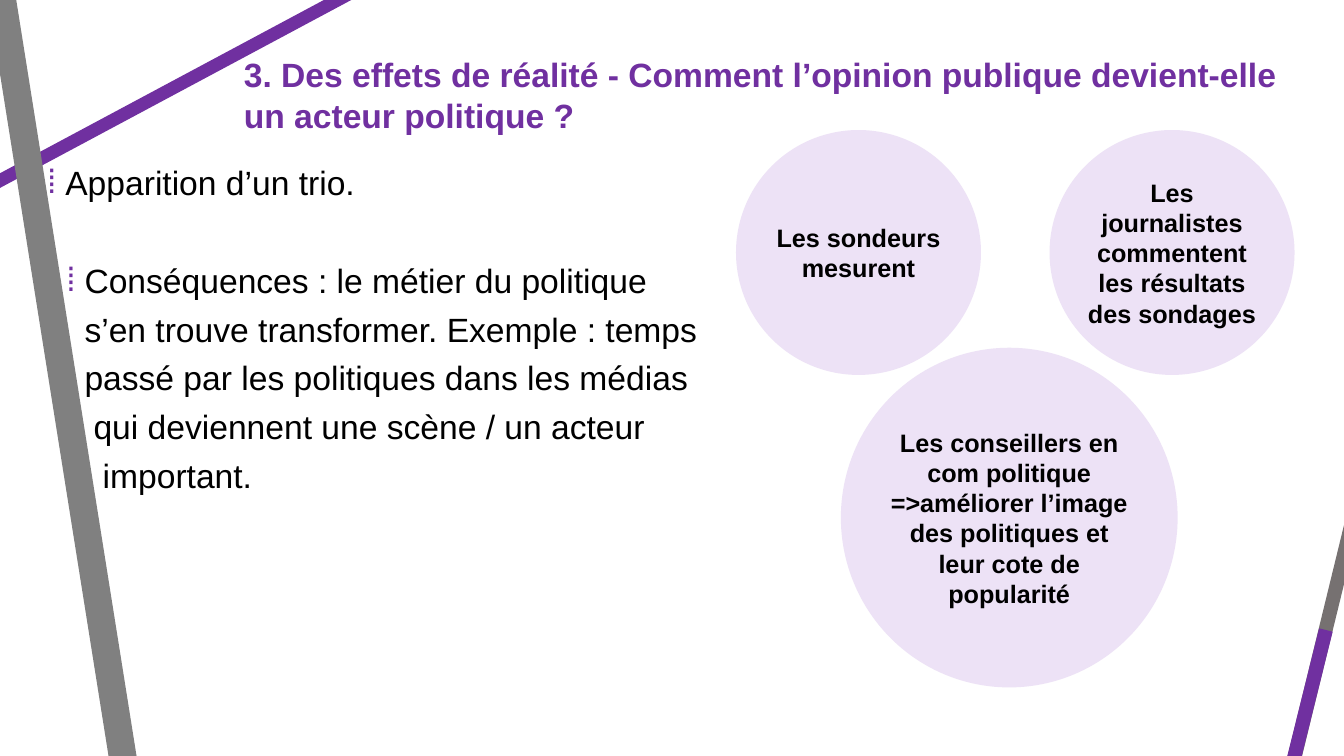
from dataclasses import dataclass

from lxml import etree
from pptx import Presentation
from pptx.dml.color import RGBColor
from pptx.enum.shapes import MSO_CONNECTOR, MSO_SHAPE
from pptx.enum.text import MSO_ANCHOR, PP_ALIGN
from pptx.oxml.ns import qn
from pptx.util import Pt

STRAIGHT = MSO_CONNECTOR.STRAIGHT
OVAL = MSO_SHAPE.OVAL
MIDDLE = MSO_ANCHOR.MIDDLE
CENTER = PP_ALIGN.CENTER
PX = 9144


@dataclass(frozen=True)
class Theme:
    font: str = "Arial"
    accent: str = "7030A0"
    grey: str = "808080"
    dark_grey: str = "767171"
    pale: str = "EDE2F6"
    text: str = "000000"
    large: int = 24
    small: int = 18
    gap: int = 6


class Deck:
    def __init__(self, theme, width, height):
        self.theme = theme
        self.prs = Presentation()
        self.prs.slide_width = width * PX
        self.prs.slide_height = height * PX
        self.s = self.prs.slides.add_slide(self.prs.slide_layouts[6])

    def style(self, p, size, color, bold=False):
        for r in p.runs:
            r.font.name = self.theme.font
            r.font.size = Pt(size)
            r.font.bold = bold
            r.font.color.rgb = RGBColor.from_string(color)

    def line(self, start, end, color, width):
        c = self.s.shapes.add_connector(STRAIGHT, *(v * PX for v in start + end))
        c.line.color.rgb = RGBColor.from_string(color)
        c.line.width = Pt(width)
        etree.SubElement(c._element.spPr, qn("a:effectLst"))

    def text_box(self, *box):
        tf = self.s.shapes.add_textbox(*(v * PX for v in box)).text_frame
        tf.word_wrap = True
        return tf

    def title(self, text, *box):
        p = self.text_box(*box).paragraphs[0]
        p.text = text
        p.space_before = Pt(self.theme.gap)
        self.style(p, self.theme.large, self.theme.accent, True)

    def bullet(self, pPr, char):
        color = etree.SubElement(pPr, qn("a:buClr"))
        etree.SubElement(color, qn("a:srgbClr"), val=self.theme.accent)
        etree.SubElement(pPr, qn("a:buFont"), typeface=self.theme.font)
        etree.SubElement(pPr, qn("a:buChar"), char=char)

    def body(self, lines, *box):
        tf = self.text_box(*box)
        for i, (text, margin, hang, before) in enumerate(lines):
            p = tf.add_paragraph() if i else tf.paragraphs[0]
            p.text = text
            p.space_before = Pt(before)
            pPr = p._p.get_or_add_pPr()
            pPr.set("marL", str(margin * PX))
            pPr.set("indent", str(-hang * PX))
            if hang:
                self.bullet(pPr, "⁞")
            self.style(p, self.theme.large, self.theme.text)

    def circle(self, text, *box):
        sp = self.s.shapes.add_shape(OVAL, *(v * PX for v in box))
        sp.shadow.inherit = False
        sp.fill.solid()
        sp.fill.fore_color.rgb = RGBColor.from_string(self.theme.pale)
        sp.line.fill.background()
        tf = sp.text_frame
        tf.text = text
        tf.word_wrap = True
        tf.vertical_anchor = MIDDLE
        tf.margin_left = tf.margin_right = tf.margin_top = tf.margin_bottom = 0
        p = tf.paragraphs[0]
        p.alignment = CENTER
        self.style(p, self.theme.small, self.theme.text, True)


def main():
    theme = Theme()
    deck = Deck(theme, 1333, 750)

    deck.line((-209, 291), (516, -97), theme.accent, 9.25)
    deck.line((0, -14), (126, 778), theme.grey, 19.75)
    deck.title(
        "3. Des effets de réalité - Comment l’opinion publique devient-elle "
        "un acteur politique ?",
        232, 49, 1088, 91,
    )
    deck.line((1226, 989), (1365, 419), theme.dark_grey, 10)
    deck.line((1218, 1015), (1315, 625), theme.accent, 10)

    deck.body(
        [
            ("Apparition d’un trio.", 18, 18, theme.gap),
            ("Conséquences : le métier du politique", 37, 18, 41),
            ("s’en trouve transformer. Exemple : temps", 37, 0, theme.gap),
            ("passé par les politiques dans les médias", 37, 0, theme.gap),
            ("qui deviennent une scène / un acteur", 46, 0, theme.gap),
            ("important.", 55, 0, theme.gap),
        ],
        37, 156, 670, 343,
    )

    deck.circle("Les sondeurs mesurent", 730, 129, 243, 243)
    deck.circle(
        "Les journalistes commentent les résultats des sondages",
        1041, 129, 243, 243,
    )
    deck.circle(
        "Les conseillers en com politique =>améliorer l’image des politiques "
        "et leur cote de popularité",
        834, 345, 334, 337,
    )
    deck.prs.save("out.pptx")


if __name__ == "__main__":
    main()
